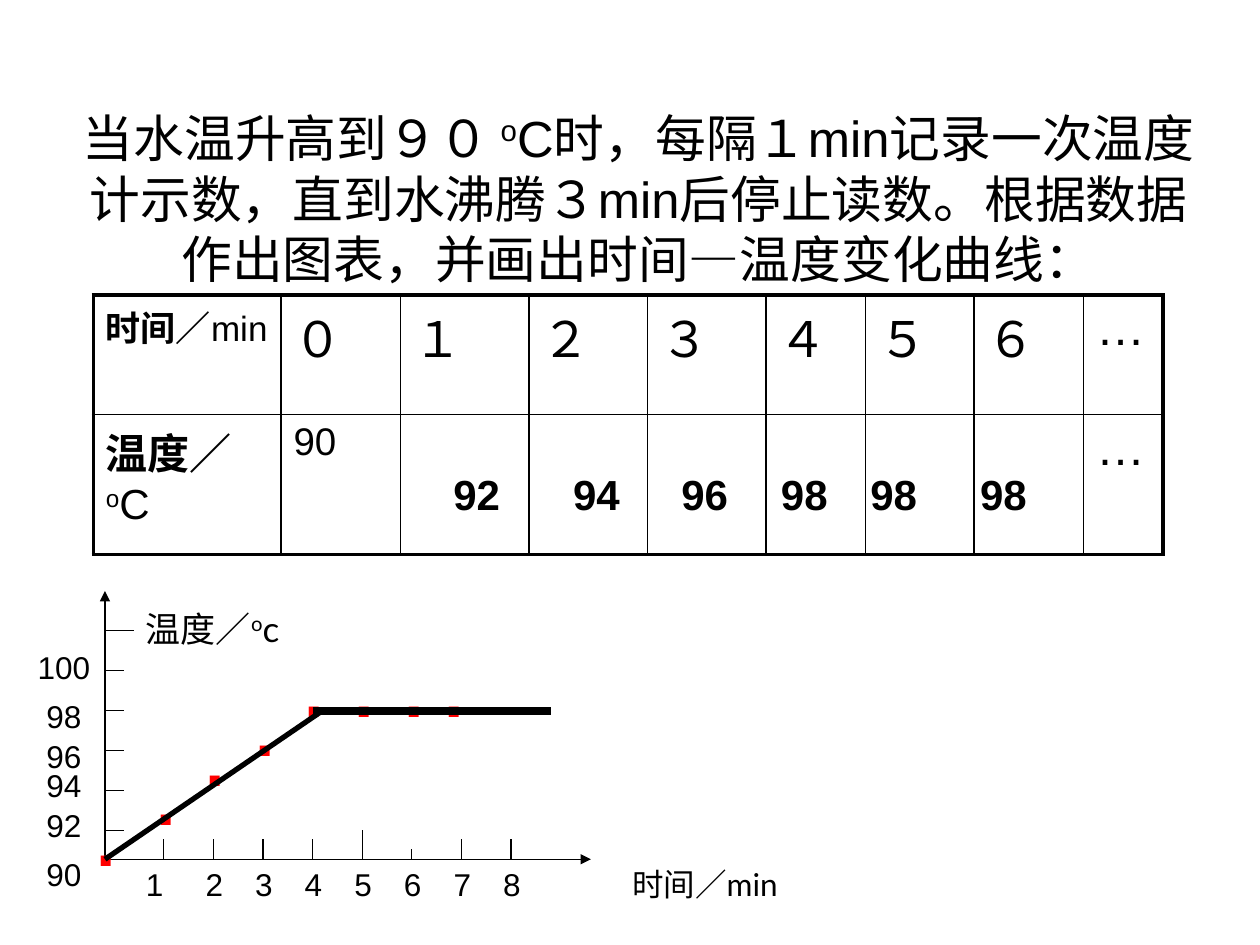
from dataclasses import dataclass

from lxml.etree import SubElement
from pptx import Presentation
from pptx.dml.color import RGBColor
from pptx.enum.shapes import MSO_CONNECTOR
from pptx.enum.text import MSO_ANCHOR, PP_ALIGN
from pptx.oxml.ns import qn
from pptx.util import Pt


@dataclass(frozen=True)
class Theme:
    ink: str = "000000"
    marker: str = "FF0000"
    font: str = "Arial"
    axis_font: str = "Lato"
    title: float = 29
    digit: float = 28
    reading: float = 24
    first_reading: float = 22
    heading: float = 20
    label: float = 18
    dot: float = 40
    thin: float = 0.75
    inner_border: float = 1
    outer_border: float = 2.25
    slope: float = 3
    plateau: float = 4.5


@dataclass(frozen=True)
class Run:
    text: str
    bold: bool = False
    raised: bool = False


@dataclass(frozen=True)
class Label:
    text: str
    left: float
    top: float


THEME = Theme()
ORIGIN_X, ORIGIN_Y = 60, 491
TICK_X, STEP_X = 93.6, 28.35
TICK_Y, STEP_Y = 474.5, 22.8


def write(text_frame, *runs: Run, size: float, font: str = THEME.font,
          color: str = THEME.ink, align=PP_ALIGN.LEFT) -> None:
    paragraph = text_frame.paragraphs[0]
    paragraph.alignment = align
    for part in runs:
        run = paragraph.add_run()
        run.text = part.text
        run.font.size = Pt(size)
        run.font.name = font
        run.font.bold = part.bold
        run.font.color.rgb = RGBColor.from_string(color)
        if part.raised:
            run.font._element.set("baseline", "30000")


def add_text(slide, left: float, top: float, width: float, height: float,
             *runs: Run, anchor=MSO_ANCHOR.TOP, **style) -> None:
    shape = slide.shapes.add_textbox(Pt(left), Pt(top), Pt(width), Pt(height))
    shape.text_frame.word_wrap = True
    shape.text_frame.vertical_anchor = anchor
    write(shape.text_frame, *runs, **style)


def add_labels(slide, labels: list[Label], width: float, height: float,
               bold: bool = False, **style) -> None:
    for label in labels:
        add_text(slide, label.left, label.top, width, height,
                 Run(label.text, bold), **style)


def add_line(slide, x1: float, y1: float, x2: float, y2: float,
             weight: float = THEME.thin, arrow: bool = False) -> None:
    connector = slide.shapes.add_connector(
        MSO_CONNECTOR.STRAIGHT, Pt(x1), Pt(y1), Pt(x2), Pt(y2))
    connector.line.color.rgb = RGBColor.from_string(THEME.ink)
    connector.line.width = Pt(weight)
    if arrow:
        SubElement(connector.line._get_or_add_ln(), qn("a:tailEnd"), type="triangle")
    SubElement(connector._element.spPr, qn("a:effectLst"))


def set_border(cell, side: str, weight: float) -> None:
    line = SubElement(cell._tc.get_or_add_tcPr(), qn(f"a:{side}"), w=str(Pt(weight)))
    fill = SubElement(line, qn("a:solidFill"))
    SubElement(fill, qn("a:srgbClr"), val=THEME.ink)


def add_readings_table(slide) -> None:
    widths = [107.3, 68.4, 73.4, 67.7, 67.7, 56.9, 61.9, 62.6, 45.4]
    heights = [68.4, 79.9]
    table = slide.shapes.add_table(
        len(heights), len(widths), Pt(53.3), Pt(168.5),
        Pt(sum(widths)), Pt(sum(heights))).table
    table.first_row = table.horz_banding = False
    for column, width in zip(table.columns, widths):
        column.width = Pt(width)
    for row, height in zip(table.rows, heights):
        row.height = Pt(height)

    # Borders: heavy frame, light grid
    last_row, last_column = len(heights) - 1, len(widths) - 1
    for row in range(len(heights)):
        for column in range(len(widths)):
            cell = table.cell(row, column)
            outer = {"lnL": column == 0, "lnR": column == last_column,
                     "lnT": row == 0, "lnB": row == last_row}
            for side, is_outer in outer.items():
                set_border(cell, side, THEME.outer_border if is_outer
                           else THEME.inner_border)
            cell.fill.background()

    # Cell text
    write(table.cell(0, 0).text_frame, Run("时间／", bold=True), Run("min"),
          size=THEME.heading)
    write(table.cell(1, 0).text_frame, Run("温度／", bold=True),
          Run("o", raised=True), Run("C"), size=THEME.reading)
    for column, digit in enumerate("０１２３４５６…", start=1):
        write(table.cell(0, column).text_frame, Run(digit), size=THEME.digit)
    write(table.cell(1, 1).text_frame, Run("90"), size=THEME.first_reading)
    write(table.cell(1, last_column).text_frame, Run("…"), size=THEME.digit)


def add_graph(slide) -> None:
    # Axes and their titles
    add_line(slide, ORIGIN_X, ORIGIN_Y, 337.7, ORIGIN_Y, arrow=True)
    add_line(slide, ORIGIN_X, ORIGIN_Y, ORIGIN_X, 337.7, arrow=True)
    add_text(slide, 76.3, 343.4, 113, 31, Run("温度／"), Run("o", raised=True),
             Run("c"), size=THEME.heading, font=THEME.axis_font)
    add_text(slide, 354.2, 491, 141.8, 28.8, Run("时间／min"),
             size=THEME.label, font=THEME.axis_font)

    # Ticks
    for index, length in enumerate([11, 11, 11, 11, 11, 16.5]):
        y = TICK_Y - index * STEP_Y
        add_line(slide, ORIGIN_X, y, ORIGIN_X + length, y)
    for index, length in enumerate([11.5, 11.5, 11.5, 11.5, 16.5, 5.8, 11.5, 11.5]):
        x = TICK_X + index * STEP_X
        add_line(slide, x, ORIGIN_Y, x, ORIGIN_Y - length)

    # Scale labels
    tops = [485.3, 457.2, 434.2, 417.6, 394.6, 366.5]
    scale = [Label(str(90 + 2 * index), 14.4 if index == 5 else 19.4, top)
             for index, top in enumerate(tops)]
    scale += [Label(str(minute), 76.3 if minute == 1
                    else TICK_X + (minute - 1) * STEP_X - 11.6, ORIGIN_Y)
              for minute in range(1, 9)]
    add_labels(slide, scale, 57, 28.8, size=THEME.label)

    # Measured points
    points = [(48.2, 451.4), (82.1, 428.4), (110.2, 406.1), (139, 388.8),
              (167, 366.5), (195.8, 366.5), (223.9, 366.5), (247, 366.5)]
    add_labels(slide, [Label(".", x, y) for x, y in points], 28, 55.4,
               bold=True, size=THEME.dot, color=THEME.marker)

    # Curve: heating, then boiling
    boiling_y = TICK_Y - 3 * STEP_Y
    add_line(slide, ORIGIN_X, ORIGIN_Y, 184.3, boiling_y, THEME.slope)
    add_line(slide, 178.6, boiling_y, 314.6, boiling_y, THEME.plateau)


def main() -> None:
    presentation = Presentation()
    presentation.slide_width, presentation.slide_height = Pt(720), Pt(540)
    slide = presentation.slides.add_slide(presentation.slide_layouts[6])

    # Task statement
    add_text(slide, 30.2, 64, 669.6, 98, Run("当水温升高到９０ "),
             Run("o", raised=True),
             Run("C时，每隔１min记录一次温度计示数，直到水沸腾３min后停止读数。"
                 "根据数据作出图表，并画出时间—温度变化曲线："),
             size=THEME.title, align=PP_ALIGN.CENTER, anchor=MSO_ANCHOR.MIDDLE)

    # Table and the readings laid over its second row
    add_readings_table(slide)
    lefts = [252, 320.4, 382.3, 439.2, 490.3, 553]
    values = ["92", "94", "96", "98", "98", "98"]
    add_labels(slide, [Label(value, left, 264.2) for value, left in zip(values, lefts)],
               56, 36, bold=True, size=THEME.reading)

    add_graph(slide)
    presentation.save("out.pptx")


if __name__ == "__main__":
    main()
